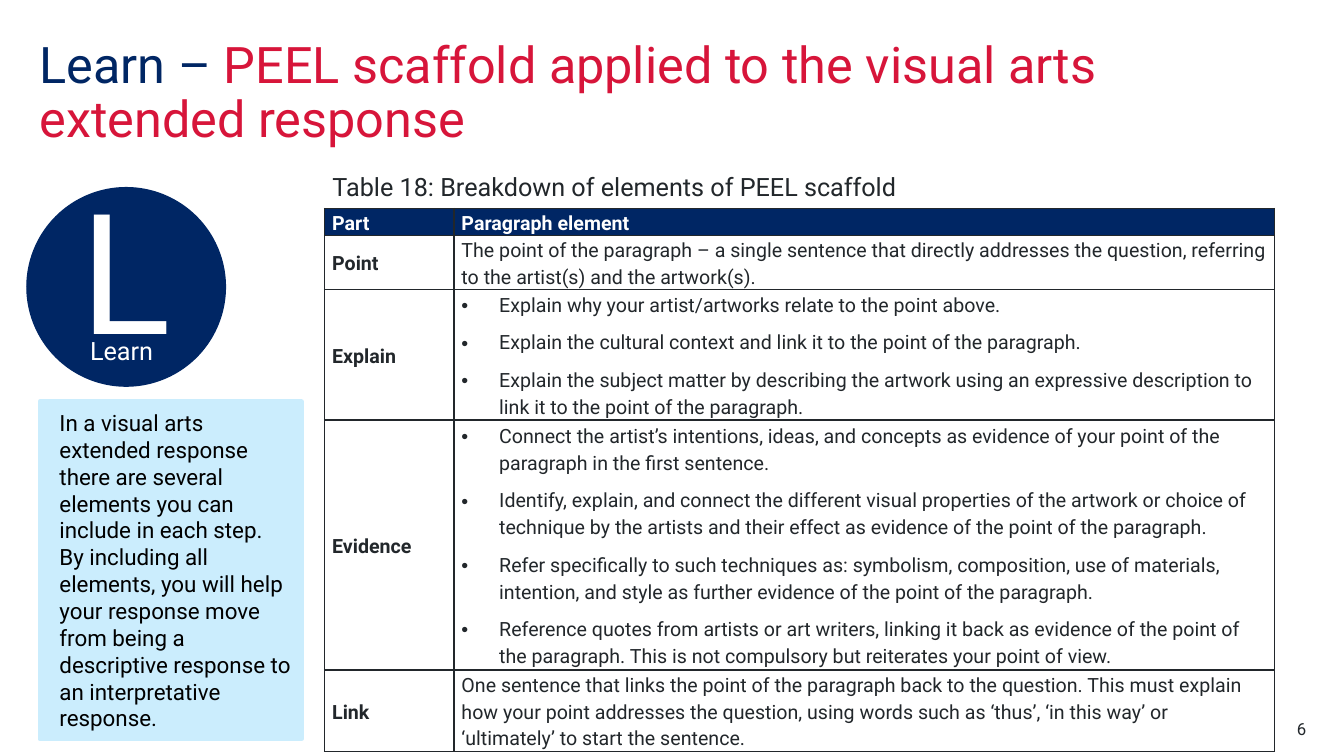
import pptx
import pptx.util
import pptx.dml.color
import pptx.enum.shapes
import pptx.enum.text
from lxml import etree

Cm, Pt = pptx.util.Cm, pptx.util.Pt
RGB = pptx.dml.color.RGBColor.from_string
SHAPE = pptx.enum.shapes.MSO_SHAPE
ALIGN = pptx.enum.text.PP_ALIGN
MIDDLE = pptx.enum.text.MSO_ANCHOR.MIDDLE
A = "http://schemas.openxmlformats.org/drawingml/2006/main"

THEME = {
    "font": "Roboto",
    "navy": "002664", "red": "D7153A", "sky": "CBEDFD",
    "ink": "22272B", "black": "000000", "white": "FFFFFF",
    "title": 36, "letter": 120, "caption": 18, "note": 16, "table": 14, "number": 12,
}


def write(p, text, size, color, bold=False, **paragraph_format):
    """Add a run to paragraph p, applying any paragraph attributes given."""
    for name, value in paragraph_format.items():
        setattr(p, name, value)
    r = p.add_run()
    r.text = text
    for name, value in {"name": THEME["font"], "size": Pt(THEME[size]), "bold": bold}.items():
        setattr(r.font, name, value)
    r.font.color.rgb = RGB(THEME[color])


def add_box(shapes, left, top, width, height, preset=None, color=None, line=1, margin=None):
    """Add a filled preset shape, or a text box if no preset is given."""
    frame = [Cm(v) for v in (left, top, width, height)]
    if preset is None:
        sp = shapes.add_textbox(*frame)
    else:
        sp = shapes.add_shape(preset, *frame)
        sp.shadow.inherit = False
        sp.fill.solid()
        sp.fill.fore_color.rgb = sp.line.color.rgb = RGB(THEME[color])
        sp.line.width = Pt(line)
        sp.text_frame.vertical_anchor = MIDDLE
    tf = sp.text_frame
    tf.word_wrap = True
    if margin is not None:
        for side in ("left", "top", "right", "bottom"):
            setattr(tf, f"margin_{side}", Cm(margin))
    return tf


prs = pptx.Presentation()
prs.slide_width, prs.slide_height = Cm(33.87), Cm(19.05)
s = prs.slides.add_slide(prs.slide_layouts[6])

# Title
p = add_box(s.shapes, 1, 1, 28, 2.8, margin=0).paragraphs[0]
write(p, "Learn – ", "title", "navy", line_spacing=0.9)
write(p, "PEEL scaffold applied to the visual arts extended response", "title", "red")

# Learn badge
badge = s.shapes.add_group_shape()
tf = add_box(badge.shapes, 0.68, 4.73, 5, 5, SHAPE.OVAL, "navy")
tf.margin_bottom = Cm(1.12)
write(tf.paragraphs[0], "L", "letter", "white", alignment=ALIGN.CENTER)
tf = add_box(badge.shapes, 2.27, 8.45, 1.85, 1.22, margin=0)
write(tf.paragraphs[0], "Learn", "caption", "white")

# Side note
p = add_box(s.shapes, 1, 10.12, 6.6, 8.5, SHAPE.RECTANGLE, "sky", 3).paragraphs[0]
p._p.get_or_add_pPr().set("marL", str(Cm(0.25)))
write(p, "In a visual arts extended response there are several elements you can include in each "
      "step. By including all elements, you will help your response move from being a descriptive "
      "response to an interpretative response.", "note", "black", alignment=ALIGN.LEFT)

# Table
tf = add_box(s.shapes, 8.13, 4.19, 20.68, 1.02)
write(tf.paragraphs[0], "Table 18: Breakdown of elements of PEEL scaffold", "caption", "ink")

ROWS = [
    ("Part", 0.68, ["Paragraph element"]),
    ("Point", 1.36, [
        "The point of the paragraph – a single sentence that directly addresses the question, "
        "referring to the artist(s) and the artwork(s)."]),
    ("Explain", 3.28, [
        "Explain why your artist/artworks relate to the point above.",
        "Explain the cultural context and link it to the point of the paragraph.",
        "Explain the subject matter by describing the artwork using an expressive description to "
        "link it to the point of the paragraph."]),
    ("Evidence", 6.3, [
        "Connect the artist’s intentions, ideas, and concepts as evidence of your point of the "
        "paragraph in the first sentence.",
        "Identify, explain, and connect the different visual properties of the artwork or choice "
        "of technique by the artists and their effect as evidence of the point of the paragraph.",
        "Refer specifically to such techniques as: symbolism, composition, use of materials, "
        "intention, and style as further evidence of the point of the paragraph.",
        "Reference quotes from artists or art writers, linking it back as evidence of the point "
        "of the paragraph. This is not compulsory but reiterates your point of view."]),
    ("Link", 2.04, [
        "One sentence that links the point of the paragraph back to the question. This must "
        "explain how your point addresses the question, using words such as ‘thus’, ‘in this way’ "
        "or ‘ultimately’ to start the sentence."]),
]
COLUMNS = (3.26, 20.68)
CELL_FORMAT = {"margin_left": Cm(0.19), "margin_right": Cm(0.19), "margin_top": 0,
               "margin_bottom": 0, "vertical_anchor": MIDDLE}

table = s.shapes.add_table(len(ROWS), len(COLUMNS), Cm(8.18), Cm(5.25), Cm(sum(COLUMNS)),
                           Cm(sum(height for _, height, _ in ROWS))).table
for column, width in zip(table.columns, COLUMNS):
    column.width = Cm(width)

for i, (part, height, elements) in enumerate(ROWS):
    table.rows[i].height = Cm(height)
    header = i == 0
    for j, texts in enumerate(([part], elements)):
        cell = table.cell(i, j)
        for name, value in CELL_FORMAT.items():
            setattr(cell, name, value)
        tcPr = cell._tc.get_or_add_tcPr()
        for side in "LRTB":
            ln = etree.SubElement(tcPr, f"{{{A}}}ln{side}", w=str(Pt(1)))
            fill = etree.SubElement(ln, f"{{{A}}}solidFill")
            etree.SubElement(fill, f"{{{A}}}srgbClr", val=THEME["ink"])
        cell.fill.solid()
        cell.fill.fore_color.rgb = RGB(THEME["navy" if header else "white"])
        tf = cell.text_frame
        for n, text in enumerate(texts):
            p = tf.add_paragraph() if n else tf.paragraphs[0]
            if len(texts) > 1:
                pPr = p._p.get_or_add_pPr()
                pPr.set("marL", str(Cm(0.95)))
                pPr.set("indent", str(-Cm(0.95)))
                etree.SubElement(pPr, f"{{{A}}}buFont", typeface="Arial")
                etree.SubElement(pPr, f"{{{A}}}buChar", char="•")
            write(p, text, "table", "white" if header else "ink", header or j == 0,
                  line_spacing=1.15, space_before=Pt(4 if n else 0), space_after=Pt(4))

# Slide number
tf = add_box(s.shapes, 30.91, 18.11, 2.01, 0.51, margin=0)
write(tf.paragraphs[0], "6", "number", "ink", alignment=ALIGN.RIGHT)

prs.save("out.pptx")
